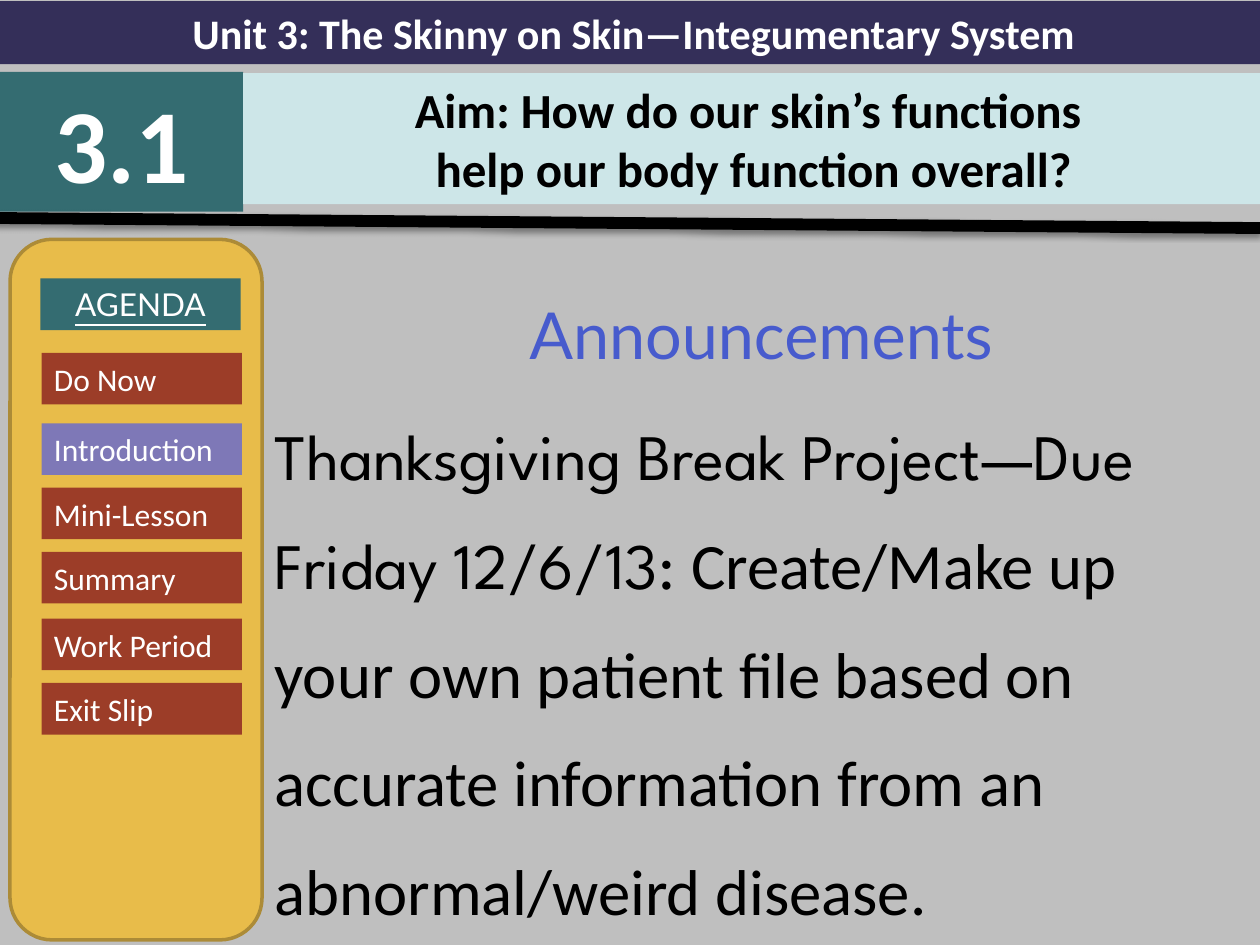
from lxml import etree
from pptx import Presentation
from pptx.dml.color import RGBColor
from pptx.enum.shapes import MSO_CONNECTOR, MSO_SHAPE
from pptx.enum.text import MSO_ANCHOR, MSO_AUTO_SIZE, PP_ALIGN
from pptx.oxml import parse_xml
from pptx.oxml.ns import nsdecls, qn
from pptx.util import Inches, Pt

WIDTH, HEIGHT = 10, 7.5
COLUMNS, ROWS = 100, 75  # grid cells of a tenth of an inch

TEAL, RUST, VIOLET = "346C71", "9C3D28", "7E78B7"
WHITE, BLACK = "FFFFFF", "000000"


def color(code):
    return RGBColor.from_string(code)


class Board:
    """Holds the style and the current slide; lengths are grid cells."""

    font = "Calibri"

    def __init__(self, deck, background):
        self.page = deck.slides.add_slide(deck.slide_layouts[5])
        self.paint(self.page.background, background)

    def to_lengths(self, x, y, *more):
        across, down = WIDTH / COLUMNS, HEIGHT / ROWS
        return [Inches(cells * (down if index % 2 else across))
                for index, cells in enumerate((x, y, *more))]

    def paint(self, target, fill):
        target.fill.solid()
        target.fill.fore_color.rgb = color(fill)

    def set_text(self, shape, lines, size, ink=WHITE, bold=False,
                 align=PP_ALIGN.CENTER, font=None, underline=False):
        frame = shape.text_frame
        frame.word_wrap = True
        frame.auto_size = MSO_AUTO_SIZE.NONE
        frame.vertical_anchor = MSO_ANCHOR.MIDDLE
        frame.text = "\n".join(lines)
        for para in frame.paragraphs:
            para.alignment = align
            para.font.name = font or self.font
            para.font.size = Pt(size)
            para.font.bold = bold
            para.font.underline = underline
            para.font.color.rgb = color(ink)

    def title(self, area, fill, text, size):
        shape = self.page.shapes.title
        shape.left, shape.top, shape.width, shape.height = self.to_lengths(*area)
        self.paint(shape, fill)
        self.set_text(shape, [text], size, bold=True)

    def box(self, area, fill, lines=(), outline=None, kind=MSO_SHAPE.RECTANGLE,
            parent=None, **text_style):
        shapes = (parent or self.page).shapes
        shape = shapes.add_shape(kind, *self.to_lengths(*area))
        shape.shadow.inherit = False
        self.paint(shape, fill)
        if outline:
            shape.line.color.rgb = color(outline)
            shape.line.width = Pt(2)
        else:
            shape.line.fill.background()
        if lines:
            self.set_text(shape, lines, **text_style)

    def passage(self, area, paragraphs, size):
        """Each paragraph is (alignment, [(text, font, ink), ...])."""
        frame = self.page.shapes.add_textbox(*self.to_lengths(*area)).text_frame
        frame.word_wrap = True
        for index, (align, spans) in enumerate(paragraphs):
            para = frame.add_paragraph() if index else frame.paragraphs[0]
            para.alignment = align
            para.line_spacing = 1.4
            para.space_before = Pt(0.2 * size)
            para.font.size = Pt(size)
            for text, font, ink in spans:
                span = para.add_run()
                span.text = text
                span.font.name = font
                span.font.color.rgb = color(ink)

    def rule(self, start, end, width):
        line = self.page.shapes.add_connector(
            MSO_CONNECTOR.STRAIGHT, *self.to_lengths(*start, *end))
        line.line.color.rgb = color(BLACK)
        line.line.width = Pt(width)
        effects = etree.SubElement(line._element.spPr, qn("a:effectLst"))
        effects.append(parse_xml(
            f'<a:outerShdw {nsdecls("a")} blurRad="40000" dist="20000" '
            'dir="5400000" rotWithShape="0"><a:srgbClr val="000000">'
            '<a:alpha val="38000"/></a:srgbClr></a:outerShdw>'))


def main():
    deck = Presentation()
    deck.slide_width, deck.slide_height = Inches(WIDTH), Inches(HEIGHT)
    board = Board(deck, "BFBFBF")

    # Announcements
    board.passage((20.8, 20.4, 79.2, 54.6), [
        (PP_ALIGN.CENTER, [("Announcements", "Lato", "475BCD")]),
        (PP_ALIGN.LEFT, [
            ("Thanksgiving Break Project—Due Friday 12/6/13: ",
             "League Spartan", BLACK),
            ("Create/Make up your own patient file based on accurate "
             "information from an abnormal/weird disease.",
             "Calibri", BLACK)]),
    ], size=37)

    # Unit, lesson number and aim
    board.title((0, 0.1, 100.6, 5), "342F59",
                "Unit 3: The Skinny on Skin—Integumentary System", 24)
    board.box((0, 5.7, 19.3, 11.1), TEAL, ["3.1"], size=60, bold=True)
    board.box((19.3, 5.8, 81, 10.4), "CDE6E8",
              ["Aim: How do our skin’s functions ",
               "help our body function overall?"],
              size=28, ink=BLACK, bold=True)
    board.rule((-0.5, 17.3), (100, 18.1), width=6.75)

    # Agenda panel
    panel = board.page.shapes.add_group_shape()
    board.box((0.8, 19, 20, 55.6), "E8BC4A", outline="AC8B37",
              kind=MSO_SHAPE.ROUNDED_RECTANGLE, parent=panel)
    board.box((3.2, 22.1, 15.9, 4.1), TEAL, ["AGENDA"], parent=panel,
              size=18, font="Lato", underline=True)

    # Agenda steps, with the current one in violet
    steps = [("Do Now", 28), ("Introduction", 33.6), ("Mini-Lesson", 38.7),
             ("Summary", 43.8), ("Work Period", 49.1), ("Exit Slip", 54.2)]
    for name, top in steps:
        fill = VIOLET if name == "Introduction" else RUST
        board.box((3.3, top, 15.9, 4.1), fill, [name], parent=panel,
                  size=18, align=PP_ALIGN.LEFT)

    deck.save("out.pptx")


if __name__ == "__main__":
    main()
